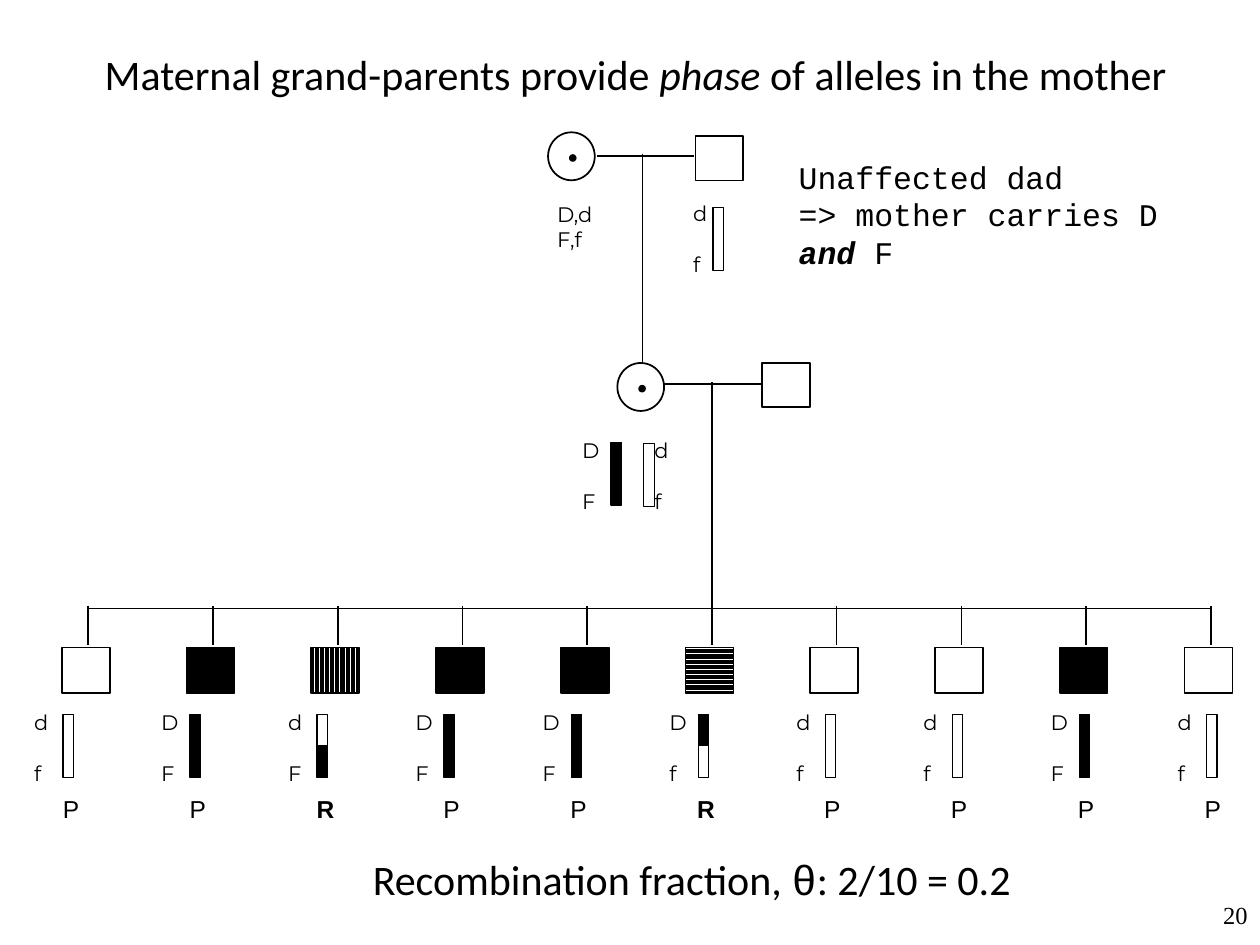
from pptx import Presentation
from pptx.dml.color import RGBColor
from pptx.enum.dml import MSO_PATTERN
from pptx.enum.shapes import MSO_CONNECTOR, MSO_SHAPE
from pptx.enum.text import MSO_ANCHOR, MSO_AUTO_SIZE, PP_ALIGN
from pptx.oxml.ns import qn
from pptx.util import Pt
from lxml.etree import SubElement

rgb = RGBColor.from_string
BLACK, WHITE = "000000", "FFFFFF"

prs = Presentation()
prs.slide_width, prs.slide_height = Pt(720), Pt(540)
s = prs.slides.add_slide(prs.slide_layouts[5])


def add_shape(kind, x, y, w, h, fill=None, weight=1):
    """fill is a hex colour, a pattern or None."""
    sp = s.shapes.add_shape(kind, Pt(x), Pt(y), Pt(w), Pt(h))
    sp.shadow.inherit = False
    if fill is None:
        sp.fill.background()
    elif isinstance(fill, str):
        sp.fill.solid()
        sp.fill.fore_color.rgb = rgb(fill)
    else:
        sp.fill.patterned()
        sp.fill.pattern = fill
        sp.fill.fore_color.rgb = rgb(BLACK)
        sp.fill.back_color.rgb = rgb(WHITE)
    sp.line.color.rgb = rgb(BLACK)
    sp.line.width = Pt(weight)


def add_text(lines, x, y, w, h, font, size, gap=0, sp=None):
    """Each line is a list of (text, style); style holds b and/or i."""
    sp = sp or s.shapes.add_textbox(0, 0, 0, 0)
    sp.left, sp.top, sp.width, sp.height = Pt(x), Pt(y), Pt(w), Pt(h)
    tf = sp.text_frame
    tf.word_wrap = True
    tf.auto_size = MSO_AUTO_SIZE.NONE
    for n, runs in enumerate(lines):
        p = tf.add_paragraph() if n else tf.paragraphs[0]
        p.alignment = PP_ALIGN.LEFT
        p.space_before = Pt(gap if n else 0)
        for text, style in runs:
            r = p.add_run()
            r.text = text
            r.font.name, r.font.size = font, Pt(size)
            r.font.bold, r.font.italic = "b" in style, "i" in style
            r.font.color.rgb = rgb(BLACK)
    return tf


# Title
tf = add_text([[("Maternal grand-parents provide ", ""), ("phase", "i"),
                (" of alleles in the mother", "")]],
              52.6, 24, 640, 36, "Calibri", 24, sp=s.shapes.title)
tf.vertical_anchor = MSO_ANCHOR.MIDDLE

# Pedigree lines: couples, descents, sibling bar and drops
PITCH = 71.28
lines = [(341.3, 89.3, 396.7, 89.3), (367.2, 87.8, 367.2, 206.6),
         (379.4, 219.6, 434.9, 219.6), (406.8, 218.2, 406.8, 347.8),
         (50.4, 347.8, 50.4 + 9 * PITCH, 347.8)]
lines += [(50.4 + i * PITCH, 346.3, 50.4 + i * PITCH, 368.6) for i in range(10)]
for ends in lines:
    c = s.shapes.add_connector(MSO_CONNECTOR.STRAIGHT, *map(Pt, ends))
    c.line.color.rgb = rgb(BLACK)
    c.line.width = Pt(1)
    SubElement(c._element.spPr, qn("a:effectLst"))

# Carrier women (dotted circles) and their husbands
for x, y, husband_x, husband_y in [(313.2, 75.6, 397.4, 77.8),
                                   (352.8, 207.4, 435.6, 207.4)]:
    add_shape(MSO_SHAPE.OVAL, x, y, 26.7, 27.4)
    add_shape(MSO_SHAPE.OVAL, x + 12.3, y + 12.9, 3.6, 3.6, BLACK, 0.75)
    add_shape(MSO_SHAPE.RECTANGLE, husband_x, husband_y, 27.4, 25.4)

# Children: square, chromosome and P/R status
BAR_W, BAR_H = 6, 36
SQUARE_FILL = {"df": WHITE, "DF": BLACK, "dF": MSO_PATTERN.DARK_VERTICAL,
               "Df": MSO_PATTERN.DARK_HORIZONTAL}
children = ["df", "DF", "dF", "DF", "DF", "Df", "df", "df", "DF", "df"]
bars = [(407.5, 126.4 - 7.6, "df"), (349.2, 252.7, "DF"), (367.9, 253.4, "df")]
bars[0] = (407.5, 118.8, "df")
labels = [(389.5, 111.6, "df"), (326.2, 247, "DF"), (367.4, 247, "df")]
for i, alleles in enumerate(children):
    add_shape(MSO_SHAPE.RECTANGLE, 35.3 + i * PITCH, 370.1, 27.4, 25.9,
              SQUARE_FILL[alleles])
    bars.append((36 + i * 72.6, 408.2, alleles))
    labels.append((13 + i * 72.6, 402.5, alleles))
    status = ("P", "") if alleles in ("DF", "df") else ("R", "b")
    add_text([[status]], 28.8 + i * 72.5, 450, 24, 24, "Arial", 14)

# Chromosome bars: black for D and F, white for d and f
for x, y, alleles in bars:
    fills = [BLACK if a.isupper() else WHITE for a in alleles]
    if fills[0] == fills[1]:
        fills = fills[:1]
    part_h = BAR_H / len(fills)
    for n, fill in enumerate(fills):
        add_shape(MSO_SHAPE.RECTANGLE, x, y + n * part_h, BAR_W, part_h,
                  fill, 0.75)

# Allele labels
label_items = [(x, y, alleles, 14.6) for x, y, alleles in labels]
label_items.append((311.8, 112.3, ["D,d", "F,f"], 0))
for x, y, alleles, gap in label_items:
    tf = add_text([[(a, "")] for a in alleles], x, y, 40, 50,
                  "Montserrat", 12, gap)
    tf.margin_left = tf.margin_right = Pt(6.5)
    tf.margin_top = tf.margin_bottom = Pt(3)

# Comment, result and slide number
add_text([[("Unaffected dad", "")],
          [("=> mother carries D ", ""), ("and", "bi"), (" F", "")]],
         449.3, 86.5, 231.8, 72, "Courier New", 18)
tf = add_text([[("Recombination fraction, ", ""), ("θ", ""),
                (": 2/10 = 0.2", "")]], 206, 484, 391, 37, "Calibri", 24)
tf.paragraphs[0].runs[1].font.name = "Courier New"
tf = add_text([[("20", "")]], 570.2, 510.5, 149.8, 29.5, "Times New Roman", 14)
tf.paragraphs[0].alignment = PP_ALIGN.RIGHT

prs.save("out.pptx")
